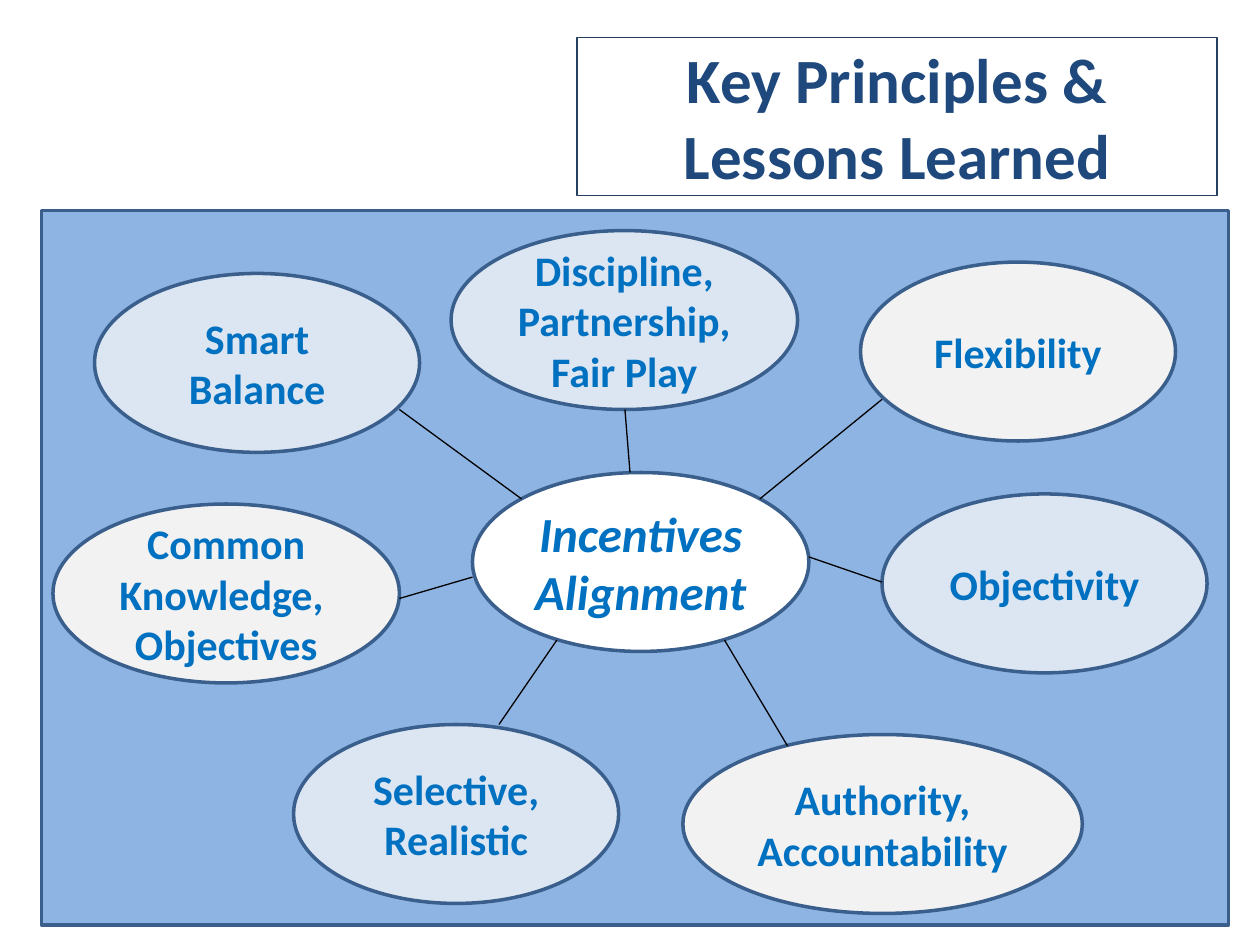
from lxml import etree
from pptx import Presentation
from pptx import util as u
from pptx.dml.color import RGBColor
from pptx.enum import shapes, text
from pptx.oxml import ns

WHITE = RGBColor(0xFF, 0xFF, 0xFF)
BLACK = RGBColor(0, 0, 0)
PANEL = RGBColor(0x8E, 0xB4, 0xE3)
EDGE = RGBColor(0x3A, 0x5F, 0x8C)
FRAME = RGBColor(0x25, 0x40, 0x61)
NAVY = RGBColor(0x1F, 0x49, 0x7D)
BLUE = RGBColor(0x00, 0x70, 0xC0)
PALE = RGBColor(0xDC, 0xE6, 0xF2)
GRAY = RGBColor(0xF2, 0xF2, 0xF2)
HIGH = 1.42

BUBBLES = [
    ("Common Knowledge,  Objectives", 0.42, 4, 2.75, GRAY),
    ("Flexibility", 6.83, 2.08, 2.5, GRAY),
    ("Discipline, Partnership, Fair Play", 3.58, 1.83, 2.75, PALE),
    ("Smart Balance", 0.75, 2.17, 2.58, PALE),
    ("Objectivity", 7, 3.92, 2.58, PALE),
    ("Selective, Realistic", 2.33, 5.75, 2.58, PALE),
    ("Authority,\nAccountability", 5.42, 5.83, 3.17, GRAY),
]
SPOKES = [
    (4.96, 3.25, 5, 3.75),
    (3.17, 3.25, 4.14, 3.96),
    (3.17, 4.75, 3.75, 4.58),
    (4.42, 5.08, 3.96, 5.75),
    (7, 3.17, 6.03, 3.96),
    (6.42, 4.42, 7, 4.62),
    (5.75, 5.08, 6.25, 5.92),
]


def write(shape, words, size=24, color=BLUE, italic=False, inset=0.05):
    frame = shape.text_frame
    frame.text = words
    frame.word_wrap = True
    frame.auto_size = text.MSO_AUTO_SIZE.NONE
    frame.vertical_anchor = text.MSO_ANCHOR.MIDDLE
    frame.margin_left = frame.margin_right = u.Inches(inset)
    for para in frame.paragraphs:
        para.alignment = text.PP_ALIGN.CENTER
        for run in para.runs:
            font = run.font
            font.name = "Calibri"
            font.size = u.Pt(size)
            font.bold = True
            font.italic = italic
            font.color.rgb = color


class Board:
    def __init__(self, slide, edge=EDGE, width=2):
        self.slide = slide
        self.edge = edge
        self.width = width

    def paint(self, shape, fill, edge, width):
        shape.fill.solid()
        shape.fill.fore_color.rgb = fill
        shape.line.color.rgb = edge
        shape.line.width = u.Pt(width)

    def title(self, words, x, y, w, h):
        shape = self.slide.shapes.title
        shape.left, shape.top = u.Inches(x), u.Inches(y)
        shape.width, shape.height = u.Inches(w), u.Inches(h)
        self.paint(shape, WHITE, FRAME, 0.75)
        write(shape, words, size=36, color=NAVY, inset=0.1)

    def shape(self, kind, x, y, w, h, fill):
        shape = self.slide.shapes.add_shape(
            kind, u.Inches(x), u.Inches(y), u.Inches(w), u.Inches(h))
        shape.shadow.inherit = False
        self.paint(shape, fill, self.edge, self.width)
        return shape

    def panel(self, x, y, w, h):
        self.shape(shapes.MSO_SHAPE.RECTANGLE, x, y, w, h, PANEL)

    def bubble(self, words, x, y, w, fill, **style):
        shape = self.shape(shapes.MSO_SHAPE.OVAL, x, y, w, HIGH, fill)
        write(shape, words, **style)

    def spoke(self, *ends):
        line = self.slide.shapes.add_connector(
            shapes.MSO_CONNECTOR.STRAIGHT, *map(u.Inches, ends))
        line.line.color.rgb = BLACK
        line.line.width = u.Pt(0.75)
        etree.SubElement(line._element.spPr, ns.qn("a:effectLst"))


def main():
    deck = Presentation()
    deck.slide_width, deck.slide_height = u.Inches(10), u.Inches(7.5)
    board = Board(deck.slides.add_slide(deck.slide_layouts[5]))
    board.title("Key Principles & Lessons Learned", 4.58, 0.3, 5.08, 1.25)
    board.panel(0.33, 1.67, 9.42, 5.67)
    board.bubble("Incentives\nAlignment", 3.75, 3.75, 2.67, WHITE,
                 size=28, italic=True)
    for item in BUBBLES:
        board.bubble(*item)
    for ends in SPOKES:
        board.spoke(*ends)
    deck.save("out.pptx")


if __name__ == "__main__":
    main()
